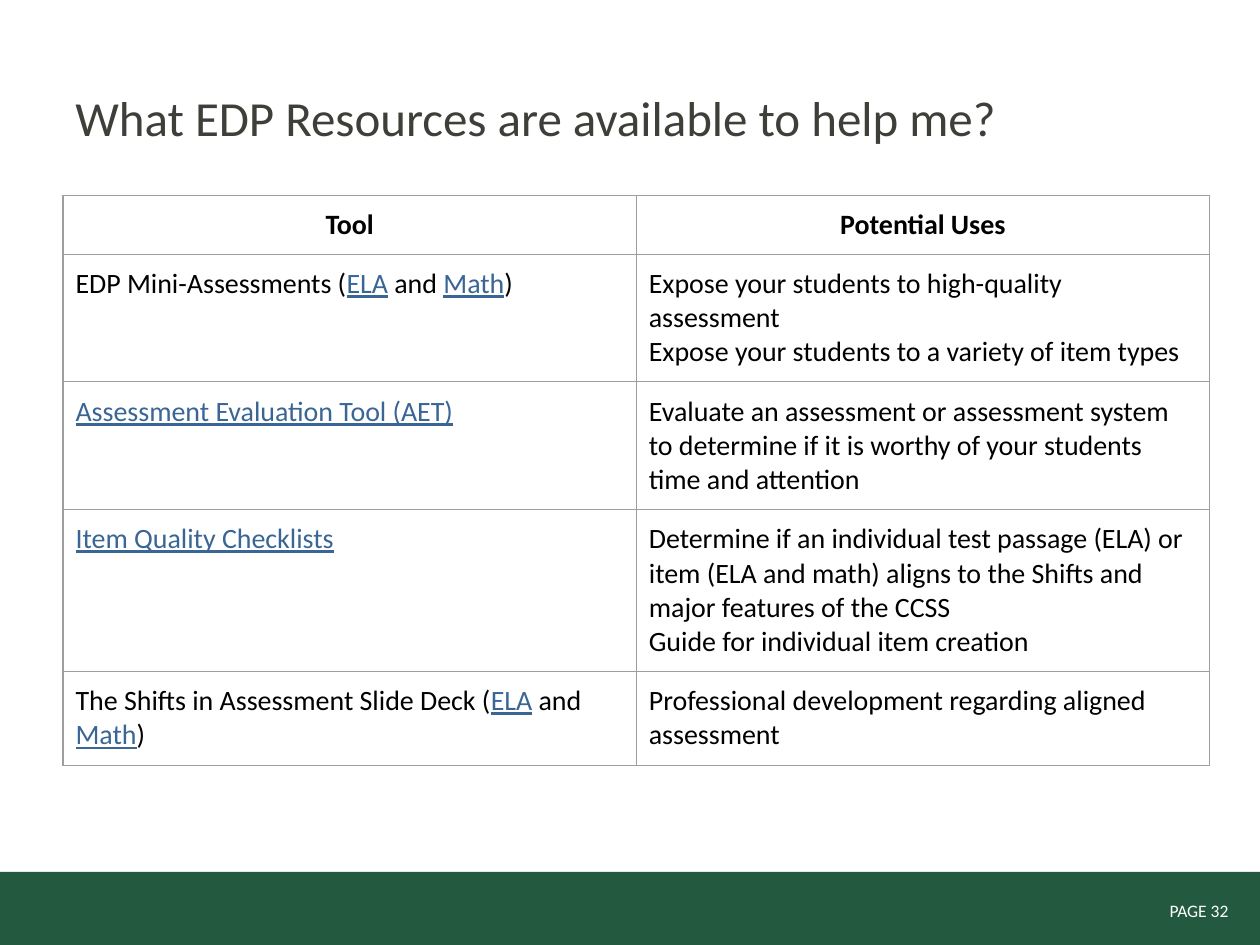
from lxml import etree
from pptx import Presentation
from pptx import util as u
from pptx.dml.color import RGBColor
from pptx.enum import shapes, text
from pptx.oxml.ns import qn

FONT = "Calibri"
BLACK, LINK, GREY, WHITE = "000000", "396694", "9E9E9E", "FFFFFF"
GREEN, TITLE_COLOR = "23593E", "3F3F39"

TITLE = "What EDP Resources are available to help me?"
PAGE_LABEL = "PAGE 32"
HEADERS = ["Tool", "Potential Uses"]

# Each row: height, tool as (words, is_link) runs, uses as paragraphs
SUBJECTS = [("ELA", True), (" and ", False), ("Math", True), (")", False)]
ROWS = [
    (73, [("EDP Mini-Assessments (", False)] + SUBJECTS,
     ["Expose your students to high-quality assessment",
      "Expose your students to a variety of item types"]),
    (73, [("Assessment Evaluation Tool (AET)", True)],
     ["Evaluate an assessment or assessment system to determine if it is "
      "worthy of your students time and attention"]),
    (92.5, [("Item Quality Checklists", True)],
     ["Determine if an individual test passage (ELA) or item (ELA and math) "
      "aligns to the Shifts and major features of the CCSS",
      "Guide for individual item creation"]),
    (53.5, [("The Shifts in Assessment Slide Deck (", False)] + SUBJECTS,
     ["Professional development regarding aligned assessment"]),
]
HEADER_HEIGHT = 33.5
TABLE_LEFT, TABLE_TOP, COLUMN_WIDTH = 36, 111.6, 327.6
INSET = 7.2


def color(value):
    return RGBColor.from_string(value)


def add_run(para, words, size, shade, bold=False, underline=False):
    span = para.add_run()
    span.text = words
    font = span.font
    font.name, font.size = FONT, u.Pt(size)
    font.bold, font.underline = bold, underline
    font.color.rgb = color(shade)


def add_label(page, area, words, size, shade, align, inset_y):
    box = page.shapes.add_textbox(*(u.Pt(value) for value in area))
    frame = box.text_frame
    frame.word_wrap = True
    frame.vertical_anchor = text.MSO_ANCHOR.MIDDLE
    frame.margin_left = frame.margin_right = u.Pt(INSET)
    frame.margin_top = frame.margin_bottom = u.Pt(inset_y)
    para = frame.paragraphs[0]
    para.alignment = align
    add_run(para, words, size, shade)


def add_borders(cell):
    properties = cell._tc.get_or_add_tcPr()
    for index, side in enumerate(("lnL", "lnR", "lnT", "lnB")):
        line = etree.Element(qn("a:" + side), w=str(u.Pt(0.75)))
        fill = etree.SubElement(line, qn("a:solidFill"))
        etree.SubElement(fill, qn("a:srgbClr"), val=GREY)
        properties.insert(index, line)


def fill_cell(cell, paragraphs, bold=False, align=text.PP_ALIGN.LEFT):
    cell.fill.background()
    cell.margin_left = cell.margin_right = u.Pt(INSET)
    cell.margin_top = cell.margin_bottom = u.Pt(INSET)
    add_borders(cell)
    frame = cell.text_frame
    for index, runs in enumerate(paragraphs):
        para = frame.add_paragraph() if index else frame.paragraphs[0]
        para.alignment = align
        for words, is_link in runs:
            add_run(para, words, 16, LINK if is_link else BLACK, bold, is_link)


def add_resource_table(page):
    heights = [HEADER_HEIGHT] + [row[0] for row in ROWS]
    table = page.shapes.add_table(
        len(heights), len(HEADERS), u.Pt(TABLE_LEFT), u.Pt(TABLE_TOP),
        u.Pt(COLUMN_WIDTH * len(HEADERS)), u.Pt(sum(heights))).table
    table.horz_banding = False
    for column in table.columns:
        column.width = u.Pt(COLUMN_WIDTH)
    for row, height in zip(table.rows, heights):
        row.height = u.Pt(height)
    for index, header in enumerate(HEADERS):
        fill_cell(table.cell(0, index), [[(header, False)]], True,
                  text.PP_ALIGN.CENTER)
    for index, (_, tool, uses) in enumerate(ROWS, start=1):
        fill_cell(table.cell(index, 0), [tool])
        fill_cell(table.cell(index, 1), [[(use, False)] for use in uses])


def main():
    deck = Presentation()
    deck.slide_width, deck.slide_height = u.Pt(720), u.Pt(540)
    page = deck.slides.add_slide(deck.slide_layouts[6])

    # Footer band and page label
    band = page.shapes.add_shape(shapes.MSO_SHAPE.RECTANGLE, u.Pt(0),
                                 u.Pt(498.25), u.Pt(720), u.Pt(41.75))
    band.shadow.inherit = False
    band.fill.solid()
    band.fill.fore_color.rgb = color(GREEN)
    band.line.fill.background()
    add_label(page, (596, 510.5, 113, 19.5), PAGE_LABEL, 10, WHITE,
              text.PP_ALIGN.RIGHT, 3.6)

    # Title and table
    add_label(page, (36, 21.6, 648, 90), TITLE, 28, TITLE_COLOR,
              text.PP_ALIGN.LEFT, INSET)
    add_resource_table(page)

    deck.save("out.pptx")


if __name__ == "__main__":
    main()
